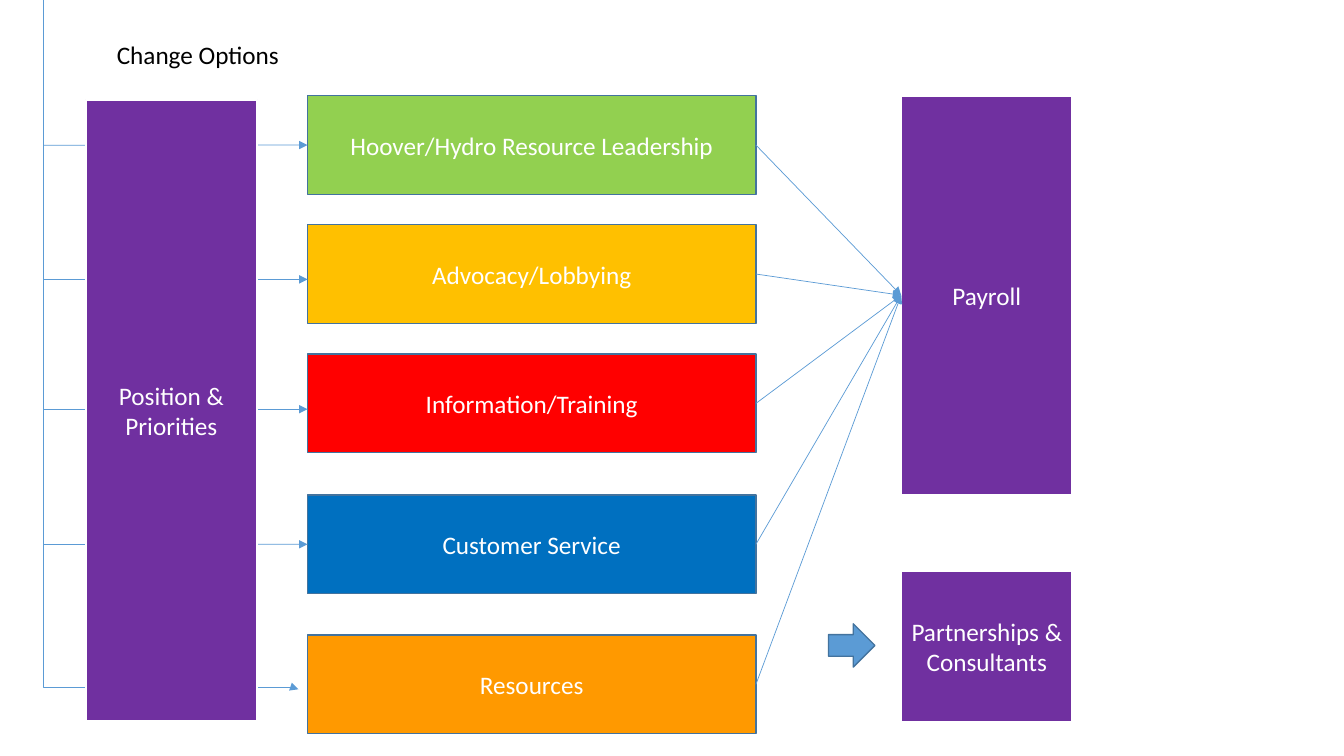
from lxml import etree
from pptx import Presentation
from pptx.dml.color import RGBColor
from pptx.enum.shapes import MSO_CONNECTOR, MSO_SHAPE
from pptx.enum.text import MSO_ANCHOR, MSO_AUTO_SIZE, PP_ALIGN
from pptx.oxml.ns import qn
from pptx.util import Cm, Pt

RECT, ARROW = MSO_SHAPE.RECTANGLE, MSO_SHAPE.RIGHT_ARROW
LINE, ELBOW = MSO_CONNECTOR.STRAIGHT, MSO_CONNECTOR.ELBOW
LEFT, CENTER = PP_ALIGN.LEFT, PP_ALIGN.CENTER
TOP, MIDDLE = MSO_ANCHOR.TOP, MSO_ANCHOR.MIDDLE

FONT, SIZE = "Calibri", 18
BLACK, WHITE, PURPLE = "000000", "FFFFFF", "7030A0"
BLUE, EDGE = "5B9BD5", "43739E"

TITLE = ("Change Options", (2.69, 0.86, 6.15, 1.02))
OPTIONS = [
    ("Hoover/Hydro Resource Leadership", "92D050", 2.41),
    ("Advocacy/Lobbying", "FFC000", 5.66),
    ("Information/Training", "FF0000", 8.92),
    ("Customer Service", "0070C0", 12.47),
    ("Resources", "FF9900", 16.0),
]
OPT_X, OPT_W, OPT_H = 7.75, 11.3, 2.49
BRANCHES = [(0, 3.66), (1, 7.04), (2, 10.31), (3, 13.72)]
JOINED = (0, 3)
BUS_X, BUS_END, BUS_Y = 1.09, 7.52, 17.37
BUS_BEND = 99700
POSITION = ("Position & Priorities", (2.16, 2.51, 4.32, 15.65))
PAYROLL = ("Payroll", (22.71, 2.41, 4.32, 10.06))
PARTNERS = ("Partnerships & Consultants", (22.71, 14.38, 4.32, 3.81))
POINTER = (20.88, 15.72, 1.17, 1.09)


def rgb(code):
    return RGBColor.from_string(code)


def write(shape, text, color, align, anchor):
    frame = shape.text_frame
    frame.word_wrap = True
    frame.auto_size = MSO_AUTO_SIZE.NONE
    frame.vertical_anchor = anchor
    para = frame.paragraphs[0]
    para.alignment = align
    run = para.add_run()
    run.text = text
    run.font.name, run.font.size = FONT, Pt(SIZE)
    run.font.color.rgb = rgb(color)


def block(kind, area, fill, edge, width, text=""):
    shape = slide.shapes.add_shape(kind, *map(Cm, area))
    shape.shadow.inherit = False
    shape.fill.solid()
    shape.fill.fore_color.rgb = rgb(fill)
    shape.line.color.rgb = rgb(edge)
    shape.line.width = Pt(width)
    if text:
        write(shape, text, WHITE, CENTER, MIDDLE)
    return shape


def link(kind, x1, y1, x2, y2):
    wire = slide.shapes.add_connector(kind, Cm(x1), Cm(y1), Cm(x2), Cm(y2))
    wire.line.color.rgb = rgb(BLUE)
    wire.line.width = Pt(0.5)
    etree.SubElement(wire.line._get_or_add_ln(), qn("a:tailEnd"), type="triangle")
    etree.SubElement(wire._element.spPr, qn("a:effectLst"))
    return wire


def bus():
    mid_x, mid_y = (BUS_X + BUS_END) / 2, BUS_Y / 2
    half_w, half_h = BUS_Y / 2, (BUS_END - BUS_X) / 2
    wire = link(ELBOW, mid_x + half_w, mid_y - half_h, mid_x - half_w, mid_y + half_h)
    props = wire._element.spPr
    props.find(qn("a:xfrm")).set("rot", "16200000")
    guides = props.find(qn("a:prstGeom")).find(qn("a:avLst"))
    etree.SubElement(guides, qn("a:gd"), name="adj1", fmla=f"val {BUS_BEND}")


deck = Presentation()
deck.slide_width, deck.slide_height = Cm(33.87), Cm(19.05)
slide = deck.slides.add_slide(deck.slide_layouts[5])

name, area = TITLE
head = slide.shapes.title
head.left, head.top, head.width, head.height = map(Cm, area)
write(head, name, BLACK, LEFT, TOP)

bus()
boxes = [
    block(RECT, (OPT_X, y, OPT_W, OPT_H), fill, EDGE, 1, text)
    for text, fill, y in OPTIONS
]
payroll = block(RECT, PAYROLL[1], PURPLE, WHITE, 1.5, PAYROLL[0])

for i, y in BRANCHES:
    wire = link(LINE, BUS_X, y, OPT_X, y)
    if i in JOINED:
        wire.end_connect(boxes[i], 1)

for box in boxes:
    wire = link(LINE, 0, 0, 1, 1)
    wire.begin_connect(box, 3)
    wire.end_connect(payroll, 1)

block(RECT, PARTNERS[1], PURPLE, WHITE, 1.5, PARTNERS[0])
block(ARROW, POINTER, BLUE, EDGE, 1)
block(RECT, POSITION[1], PURPLE, WHITE, 1.5, POSITION[0])

deck.save("out.pptx")
